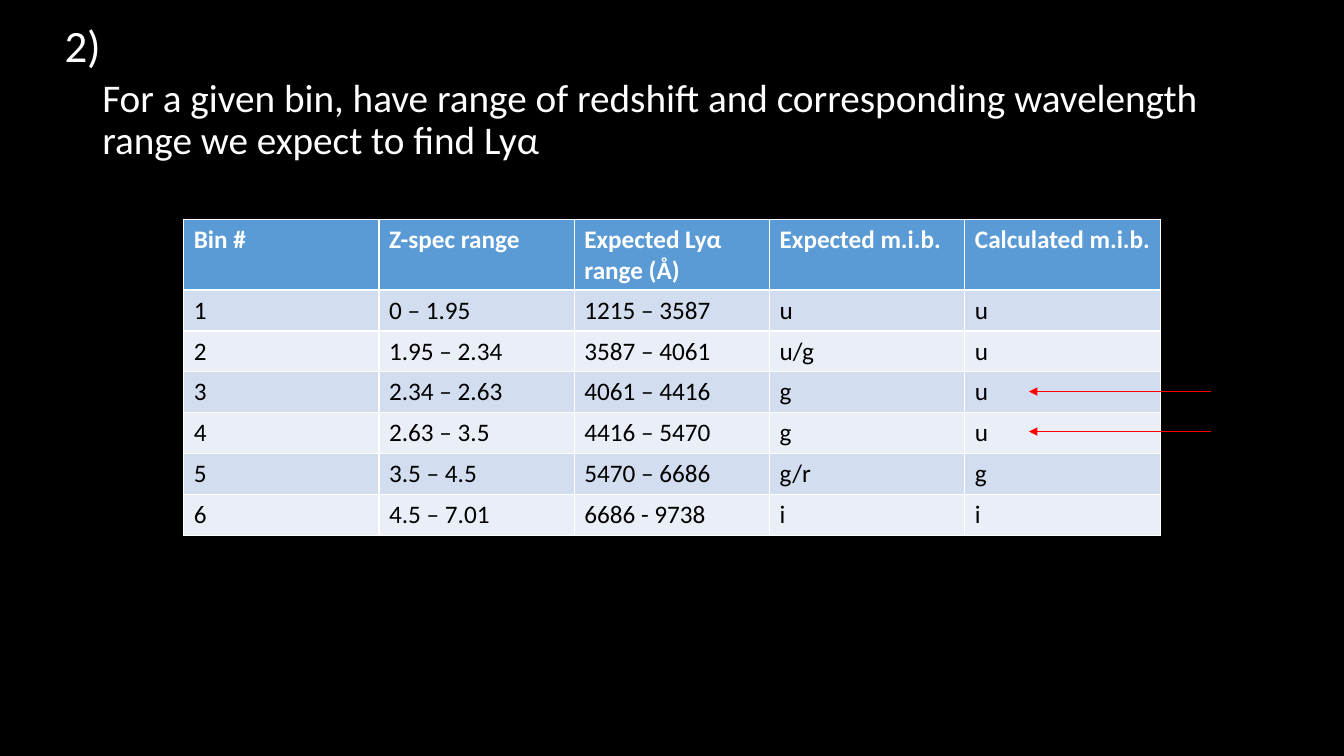
from lxml import etree
from pptx import Presentation
from pptx.dml.color import RGBColor
from pptx.enum.shapes import MSO_CONNECTOR
from pptx.enum.text import MSO_AUTO_SIZE
from pptx.oxml.ns import qn
from pptx.util import Pt

PX = 9525
FONT = "Calibri"
BLACK = RGBColor(0x00, 0x00, 0x00)
WHITE = RGBColor(0xFF, 0xFF, 0xFF)
RED = RGBColor(0xFF, 0x00, 0x00)
HEADER_BLUE = RGBColor(0x5B, 0x9B, 0xD5)
BANDS = (RGBColor(0xD2, 0xDE, 0xEF), RGBColor(0xEA, 0xEF, 0xF7))

BIN_ROWS = [
    ("Bin #", "Z-spec range", "Expected Lyα range (Å)", "Expected m.i.b.", "Calculated m.i.b."),
    ("1", "0 – 1.95", "1215 – 3587", "u", "u"),
    ("2", "1.95 – 2.34", "3587 – 4061", "u/g", "u"),
    ("3", "2.34 – 2.63", "4061 – 4416", "g", "u"),
    ("4", "2.63 – 3.5", "4416 – 5470", "g", "u"),
    ("5", "3.5 – 4.5", "5470 – 6686", "g/r", "g"),
    ("6", "4.5 – 7.01", "6686 - 9738", "i", "i"),
]


def px(*lengths):
    """Convert pixel lengths to EMU."""
    return [length * PX for length in lengths]


def style(p, size, color, bold=False):
    """Set the font of a whole paragraph."""
    p.font.name = FONT
    p.font.size = Pt(size)
    p.font.bold = bold
    p.font.color.rgb = color


def add_text(s, box, text, size):
    """Place a white wrapped text box and return its text frame."""
    tf = s.shapes.add_textbox(*px(*box)).text_frame
    tf.word_wrap = True
    p = tf.paragraphs[0]
    p.text = text
    style(p, size, WHITE)
    return tf


def add_heading(s, box):
    """Place the item number and the statement indented below it."""
    x, y, w, h = box
    number = add_text(s, (x, y, 81, 61), "2)", 32)
    number.auto_size = MSO_AUTO_SIZE.SHAPE_TO_FIT_TEXT
    statement = add_text(
        s, (x + 36, y + 58, w - 36, h - 58),
        "For a given bin, have range of redshift and corresponding "
        "wavelength range we expect to find Lyα", 28)
    p = statement.paragraphs[0]
    p.line_spacing = 0.9
    p.space_before = Pt(10)


def add_bin_table(s, box):
    """Fill the box with the banded table of redshift bins."""
    x, y, w, row_h = box
    rows, cols = len(BIN_ROWS), len(BIN_ROWS[0])
    table = s.shapes.add_table(rows, cols, *px(x, y, w, row_h * rows)).table
    for i, values in enumerate(BIN_ROWS):
        header = i == 0
        for j, value in enumerate(values):
            cell = table.cell(i, j)
            cell.fill.solid()
            cell.fill.fore_color.rgb = HEADER_BLUE if header else BANDS[(i - 1) % 2]
            p = cell.text_frame.paragraphs[0]
            p.text = value
            style(p, 18, WHITE if header else BLACK, header)


def add_mismatch_arrows(s, box):
    """Point a red arrow left along the top and bottom of the box."""
    x, y, w, h = box
    for arrow_y in (y, y + h):
        arrow = s.shapes.add_connector(
            MSO_CONNECTOR.STRAIGHT, *px(x + w, arrow_y, x, arrow_y))
        arrow.line.color.rgb = RED
        arrow.line.width = Pt(0.5)
        ln = arrow.line._get_or_add_ln()
        etree.SubElement(ln, qn("a:tailEnd")).set("type", "triangle")
        etree.SubElement(ln.getparent(), qn("a:effectLst"))


def main():
    """Build the slide and save it."""
    prs = Presentation()
    prs.slide_width, prs.slide_height = px(1280, 720)
    s = prs.slides.add_slide(prs.slide_layouts[6])
    s.background.fill.solid()
    s.background.fill.fore_color.rgb = BLACK
    add_heading(s, (52, 12, 1140, 156))
    add_bin_table(s, (175, 209, 930, 39))
    add_mismatch_arrows(s, (980, 373, 173, 38))
    prs.save("out.pptx")


if __name__ == "__main__":
    main()
